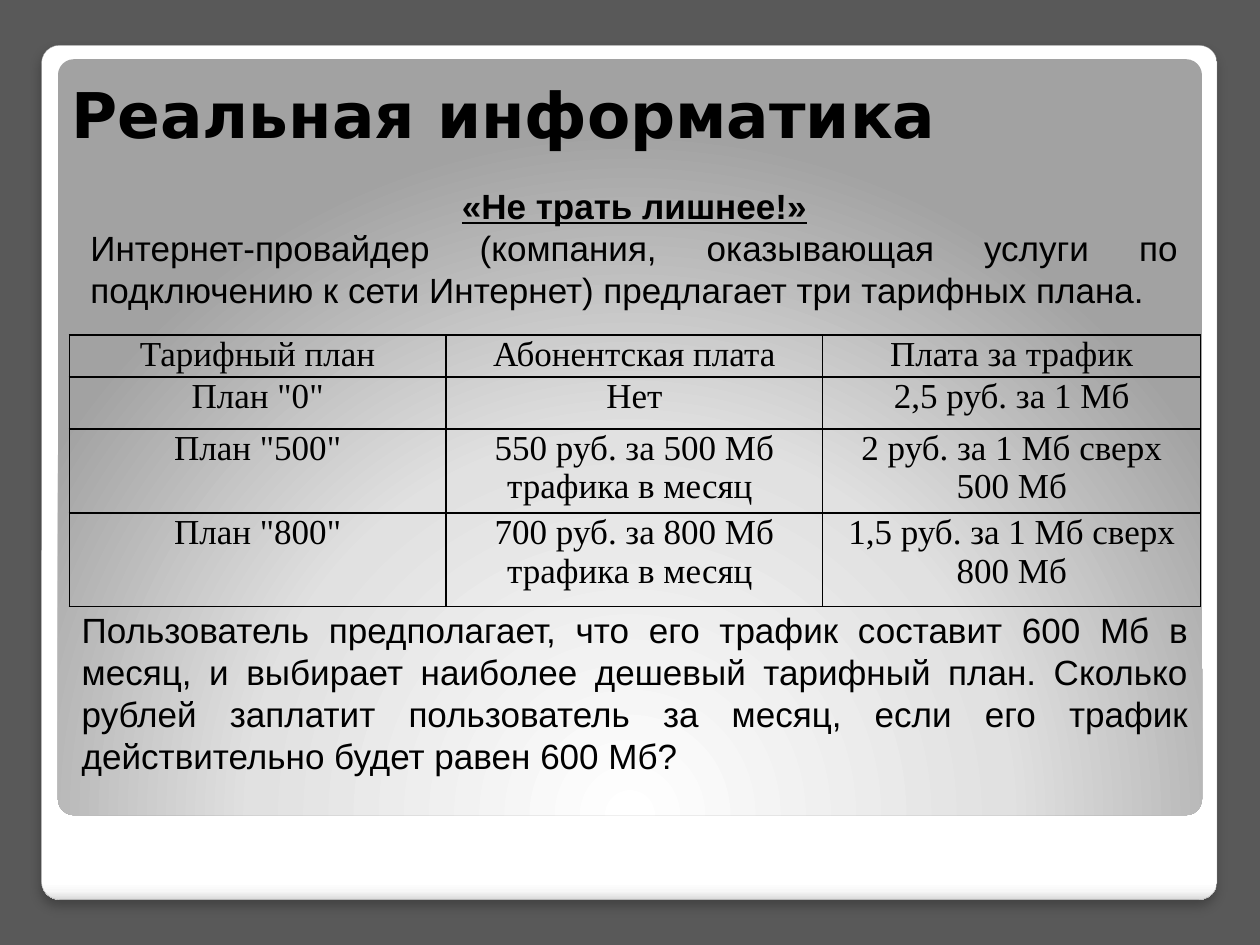
from pptx import Presentation
from pptx import util as u
from pptx.dml.color import RGBColor
from pptx.enum import shapes, text
from pptx.oxml import parse_xml
from pptx.oxml.ns import nsdecls, qn

COLORS = {"page": "595959", "ink": "000000", "frame": "A4A4A4"}
FRAME_STOPS = [(0, "FFFFFF"), (98, "FFFFFF"), (99, "F7F7F7"), (100, "DADADA")]
PANEL_STOPS = [(0, "FFFFFF"), (55, "E1E1E1"), (100, "A2A2A2")]
DOWNWARD = '<a:lin ang="5400000" scaled="0"/>'
FROM_BELOW = '<a:path path="circle"><a:fillToRect l="50000" t="175000" r="50000" b="-75000"/></a:path>'
TARIFFS = [
    ["Тарифный план", "Абонентская плата", "Плата за трафик"],
    ['План "0"', "Нет", "2,5 руб. за 1 Мб"],
    ['План "500"', "550 руб. за 500 Мб трафика в месяц ", "2 руб. за 1 Мб сверх 500 Мб"],
    ['План "800"', "700 руб. за 800 Мб трафика в месяц ", "1,5 руб. за 1 Мб сверх 800 Мб"],
]
COLUMN_WIDTHS = [2.99, 2.99, 3]
ROW_HEIGHTS = [0.31, 0.41, 0.67, 0.74]
INTRO = ("Интернет-провайдер (компания, оказывающая услуги по подключению к сети Интернет) "
         "предлагает три тарифных плана.")
QUESTION = ("Пользователь предполагает, что его трафик составит 600 Мб в месяц, и выбирает "
            "наиболее дешевый тарифный план. Сколько рублей заплатит пользователь за месяц, "
            "если его трафик действительно будет равен 600 Мб?")


def color(name):
    return RGBColor.from_string(COLORS[name])


def add_panel(slide, box, stops, direction):
    shape = slide.shapes.add_shape(shapes.MSO_SHAPE.ROUNDED_RECTANGLE, *map(u.Inches, box))
    shape.adjustments[0] = 0.021
    shape.shadow.inherit = False
    shape.line.fill.background()
    shape.fill.solid()
    solid = shape.element.spPr.find(qn("a:solidFill"))
    stop_xml = "".join(f'<a:gs pos="{position * 1000}"><a:srgbClr val="{value}"/></a:gs>'
                       for position, value in stops)
    gradient = parse_xml(f'<a:gradFill {nsdecls("a")} rotWithShape="1">'
                         f'<a:gsLst>{stop_xml}</a:gsLst>{direction}</a:gradFill>')
    shape.element.spPr.replace(solid, gradient)
    return shape


def add_drop_shadow(shape):
    effects = shape.element.spPr.find(qn("a:effectLst"))
    effects.append(parse_xml(
        f'<a:outerShdw {nsdecls("a")} blurRad="{u.Pt(6)}" dist="{u.Pt(4)}" dir="5400000">'
        f'<a:srgbClr val="{COLORS["ink"]}"><a:alpha val="25000"/></a:srgbClr></a:outerShdw>'))


def write_paragraph(paragraph, content, align=text.PP_ALIGN.JUSTIFY, font="Arial", size=20,
                    bold=False, underline=False):
    paragraph.alignment = align
    run = paragraph.add_run()
    run.text = content
    run.font.name, run.font.size = font, u.Pt(size)
    run.font.bold, run.font.underline = bold, underline
    run.font.color.rgb = color("ink")


def add_text(slide, box, paragraphs, anchor=text.MSO_ANCHOR.MIDDLE):
    frame = slide.shapes.add_textbox(*map(u.Inches, box)).text_frame
    frame.word_wrap = True
    frame.vertical_anchor = anchor
    for index, (content, style) in enumerate(paragraphs):
        paragraph = frame.add_paragraph() if index else frame.paragraphs[0]
        write_paragraph(paragraph, content, **style)


def add_borders(cell):
    properties = cell._tc.get_or_add_tcPr()
    for index, side in enumerate("LRTB"):
        properties.insert(index, parse_xml(
            f'<a:ln{side} {nsdecls("a")} w="{u.Pt(1)}"><a:solidFill>'
            f'<a:srgbClr val="{COLORS["ink"]}"/></a:solidFill></a:ln{side}>'))


def add_tariff_table(slide, box):
    table = slide.shapes.add_table(len(ROW_HEIGHTS), len(COLUMN_WIDTHS), *map(u.Inches, box)).table
    table.first_row = table.horz_banding = False
    for column, width in zip(table.columns, COLUMN_WIDTHS):
        column.width = u.Inches(width)
    for row, height, contents in zip(table.rows, ROW_HEIGHTS, TARIFFS):
        row.height = u.Inches(height)
        for cell, content in zip(row.cells, contents):
            cell.margin_left = cell.margin_right = u.Inches(0.07)
            cell.margin_top = cell.margin_bottom = 0
            cell.fill.background()
            add_borders(cell)
            write_paragraph(cell.text_frame.paragraphs[0], content,
                            align=text.PP_ALIGN.CENTER, font="Times New Roman")


def main():
    """Build the tariff plan problem slide."""
    presentation = Presentation()
    presentation.slide_width, presentation.slide_height = u.Inches(10), u.Inches(7.5)
    slide = presentation.slides.add_slide(presentation.slide_layouts[6])
    slide.background.fill.solid()
    slide.background.fill.fore_color.rgb = color("page")

    frame = add_panel(slide, (0.33, 0.36, 9.33, 6.78), FRAME_STOPS, DOWNWARD)
    frame.line.color.rgb = color("frame")
    frame.line.width = u.Pt(0.16)
    add_drop_shadow(frame)
    add_panel(slide, (0.46, 0.47, 9.08, 6), PANEL_STOPS, FROM_BELOW)

    title_style = {"align": text.PP_ALIGN.LEFT, "font": "DejaVu Sans", "size": 36, "bold": True}
    add_text(slide, (0.47, 0, 9, 1.25), [("Реальная информатика", title_style)],
             anchor=text.MSO_ANCHOR.BOTTOM)
    add_tariff_table(slide, (0.55, 2.66, 8.98, 2.15))
    heading_style = {"align": text.PP_ALIGN.CENTER, "bold": True, "underline": True}
    add_text(slide, (0.62, 1.41, 8.83, 1.11),
             [("«Не трать лишнее!»", heading_style), (INTRO, {})])
    add_text(slide, (0.55, 4.77, 8.98, 1.45), [(QUESTION, {})])
    presentation.save("out.pptx")


if __name__ == "__main__":
    main()
